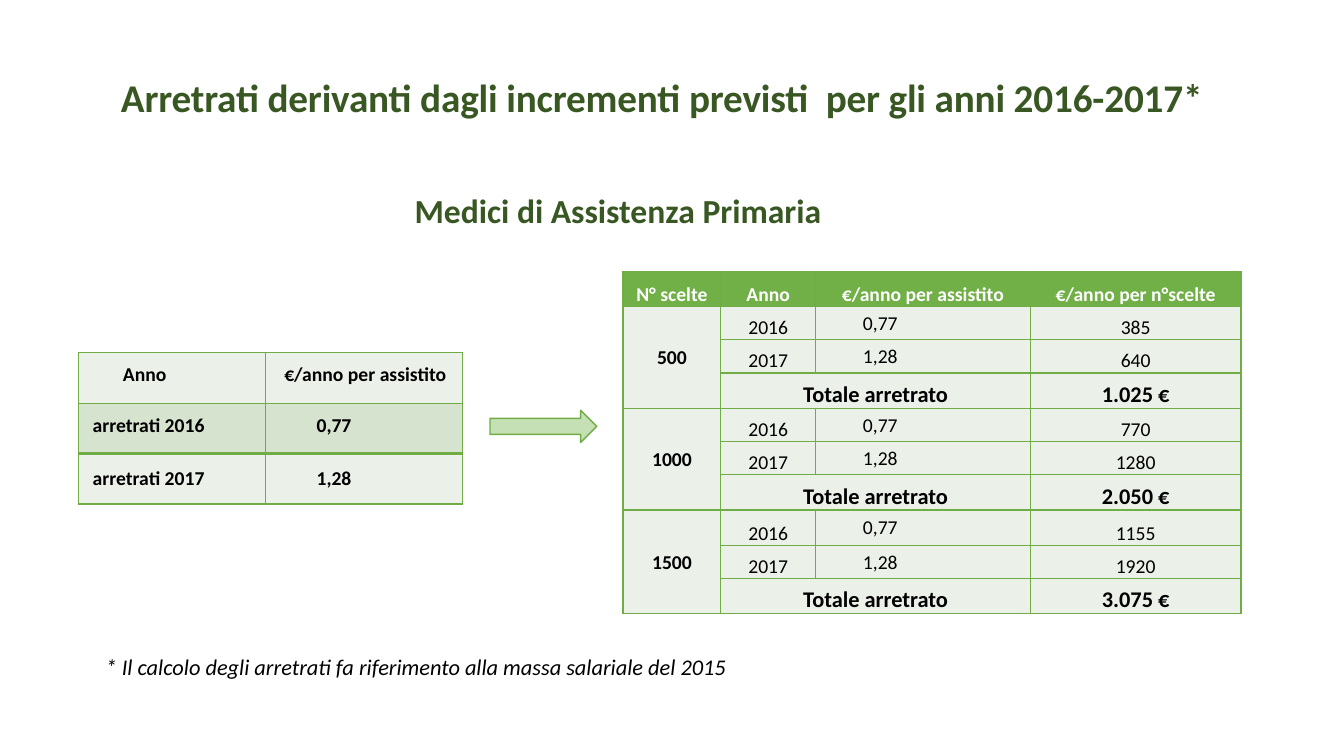
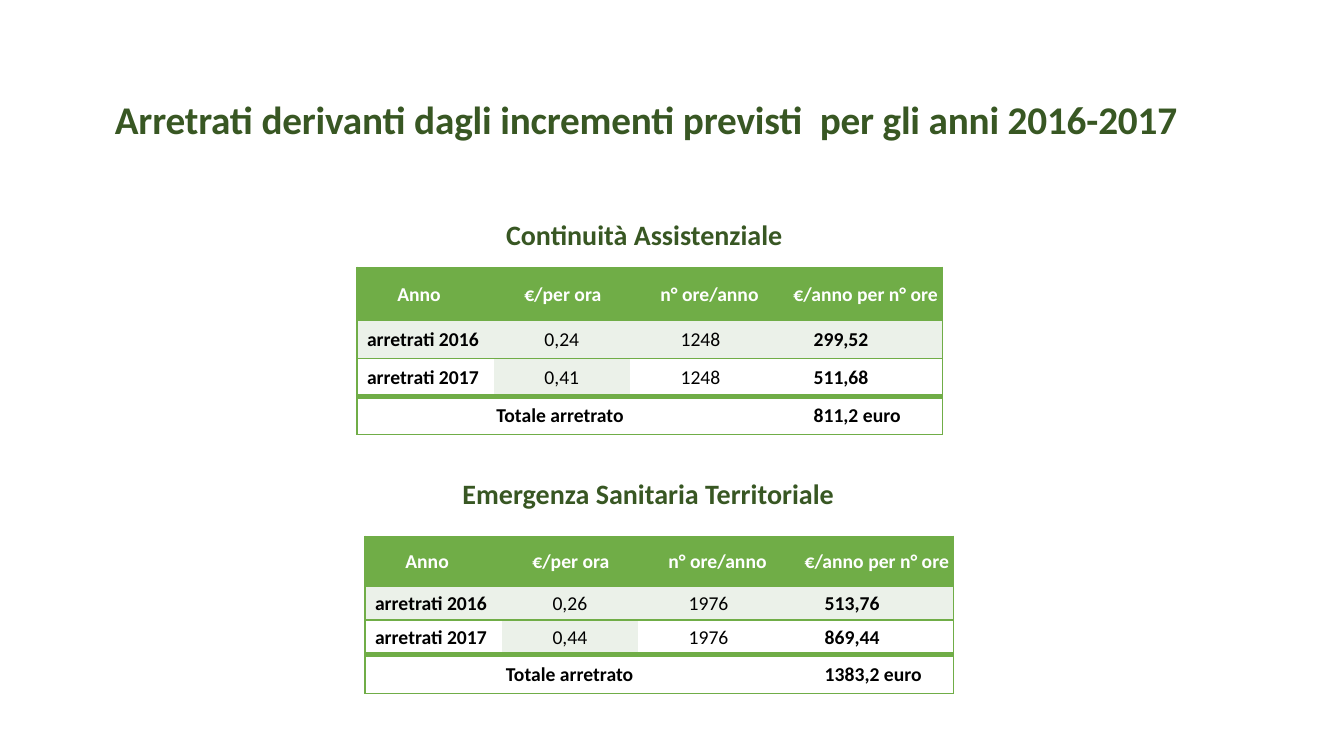
from lxml import etree
from pptx import Presentation
from pptx.dml.color import RGBColor
from pptx.enum.shapes import MSO_SHAPE
from pptx.enum.text import MSO_ANCHOR, MSO_AUTO_SIZE, PP_ALIGN
from pptx.oxml.ns import qn
from pptx.util import Inches, Pt

LEFT, CENTER = PP_ALIGN.LEFT, PP_ALIGN.CENTER
TOP, MIDDLE, BOTTOM = MSO_ANCHOR.TOP, MSO_ANCHOR.MIDDLE, MSO_ANCHOR.BOTTOM
ARROW = MSO_SHAPE.RIGHT_ARROW
NO_FIT = MSO_AUTO_SIZE.NONE

FONT = "Calibri"
INK = {
    "title": "385723", "line": "70AD47", "head": "71AF47", "pale": "EBF1E9",
    "band": "D5E3CF", "arrow": "C5E0B4", "white": "FFFFFF", "text": "000000",
}

TITLE = "Arretrati derivanti dagli incrementi previsti  per gli anni 2016-2017"
NOTE = "* Il calcolo degli arretrati fa riferimento alla massa salariale del 2015"
TOTAL = "Totale arretrato"

RATES = [
    ("Anno", "€/anno per assistito"),
    ("arretrati 2016", "0,77"),
    ("arretrati 2017", "1,28"),
]
PADS = [(0.44, 0.19), (0.14, 0.51), (0.14, 0.51)]

HEADS = ["N° scelte", "Anno", "€/anno per assistito", "€/anno per n°scelte"]
GROUPS = [
    ("500", ("385", "640"), "1.025 €"),
    ("1000", ("770", "1280"), "2.050 €"),
    ("1500", ("1155", "1920"), "3.075 €"),
]
YEARS = [("2016", "0,77"), ("2017", "1,28")]

HOURS = ["Anno", "€/per ora", "n° ore/anno", "€/anno per n° ore"]
CARE = {
    "at": (3.54, 2.65),
    "cols": (1.36, 1.35, 1.32, 1.78),
    "rows": (0.53, 0.38, 0.37, 0.38),
    "data": [
        ("arretrati 2016", "0,24", "1248", "299,52"),
        ("arretrati 2017", "0,41", "1248", "511,68"),
    ],
    "sum": "811,2 euro",
}
URGENT = {
    "at": (3.62, 5.32),
    "cols": (1.36, 1.35, 1.35, 1.78),
    "rows": (0.5, 0.33, 0.34, 0.39),
    "data": [
        ("arretrati 2016", "0,26", "1976", "513,76"),
        ("arretrati 2017", "0,44", "1976", "869,44"),
    ],
    "sum": "1383,2 euro",
}


def color(name):
    return RGBColor.from_string(INK[name])


def write(frame, text, size=14, bold=False, italic=False, ink="text",
          align=LEFT, space=None, before=0):
    para = frame.paragraphs[0]
    para.alignment = align
    para.space_before = Pt(before)
    if space:
        para.line_spacing = space
    run = para.add_run()
    run.text = text
    font = run.font
    font.name, font.size, font.bold, font.italic = FONT, Pt(size), bold, italic
    font.color.rgb = color(ink)


def place(shape, box):
    shape.left, shape.top, shape.width, shape.height = map(Inches, box)


def title(slide, text, box):
    shape = slide.shapes.title
    place(shape, box)
    frame = shape.text_frame
    frame.auto_size = NO_FIT
    frame.vertical_anchor = MIDDLE
    write(frame, text, size=28, bold=True, ink="title", space=0.9)
    for props in shape.element.iter(qn("a:rPr")):
        props.set("spc", "-10")


def label(slide, text, box, anchor=TOP, **look):
    frame = slide.shapes.add_textbox(*map(Inches, box)).text_frame
    frame.word_wrap = True
    frame.vertical_anchor = anchor
    write(frame, text, **look)


def grid(slide, at, cols, rows):
    size = (sum(cols), sum(rows))
    shape = slide.shapes.add_table(len(rows), len(cols), *map(Inches, at + size))
    table = shape.table
    table.first_row = table.horz_banding = False
    for col, width in zip(table.columns, cols):
        col.width = Inches(width)
    for row, height in zip(table.rows, rows):
        row.height = Inches(height)
    return table


def edge(cell, widths):
    props = cell._tc.get_or_add_tcPr()
    for side, width in zip("LRTB", widths):
        line = etree.SubElement(props, qn("a:ln" + side), w=str(Pt(width)))
        if width:
            fill = etree.SubElement(line, qn("a:solidFill"))
            etree.SubElement(fill, qn("a:srgbClr"), val=INK["line"])
        else:
            etree.SubElement(line, qn("a:noFill"))


def put(cell, text, fill="pale", pad=0.01, rim=0.01, anchor=MIDDLE, **look):
    cell.margin_left, cell.margin_right = Inches(pad), Inches(rim)
    cell.margin_top, cell.margin_bottom = Inches(rim), 0
    cell.vertical_anchor = anchor
    cell.fill.solid()
    cell.fill.fore_color.rgb = color(fill)
    write(cell.text_frame, text, **look)


def rates(slide):
    table = grid(slide, (0.78, 3.5), (1.85, 1.96), (0.5,) * 3)
    for r, (row, pads) in enumerate(zip(RATES, PADS)):
        for c, (text, pad) in enumerate(zip(row, pads)):
            cell = table.cell(r, c)
            edge(cell, (1, 1, 2 if r == 2 else 1, 2 if r == 1 else 1))
            put(cell, text, fill="band" if r == 1 else "pale", pad=pad, rim=0,
                bold=True, space=Pt(12.8) if r < 2 else None)


def choices(slide):
    heights = (0.35, 0.33, 0.33, 0.35, 0.33, 0.33, 0.35, 0.35, 0.33, 0.35)
    table = grid(slide, (6.18, 2.69), (0.97, 0.94, 2.13, 2.09), heights)
    for cell in table.iter_cells():
        edge(cell, (1, 1, 1, 1))
    low = {"anchor": BOTTOM, "align": CENTER}
    for c, text in enumerate(HEADS):
        put(table.cell(0, c), text, fill="head", ink="white", bold=True, **low)
    for g, (count, sums, total) in enumerate(GROUPS):
        top = 1 + 3 * g
        last = top + 2
        table.cell(top, 0).merge(table.cell(last, 0))
        put(table.cell(top, 0), count, bold=True, align=CENTER)
        for r, ((year, rate), value) in enumerate(zip(YEARS, sums), top):
            put(table.cell(r, 1), year, **low)
            put(table.cell(r, 2), rate, pad=0.47)
            put(table.cell(r, 3), value, **low)
        table.cell(last, 1).merge(table.cell(last, 2))
        for c, text in ((1, TOTAL), (3, total)):
            put(table.cell(last, c), text, size=16, bold=True, **low)


def hours(slide, plan):
    table = grid(slide, plan["at"], plan["cols"], plan["rows"])
    for r in range(4):
        for c in range(4):
            edge(table.cell(r, c), (int(c == 0), int(c == 3),
                                    4 if r == 3 else 1, 4 if r == 2 else 1))
    for c, text in enumerate(HOURS):
        put(table.cell(0, c), text, fill="line", ink="white", bold=True,
            pad=0.3 if c else 0.4)
    for r, row in enumerate(plan["data"], 1):
        for c, text in enumerate(row):
            put(table.cell(r, c), text, fill="pale" if r == 1 or c == 1 else "white",
                pad=0.5 if c else 0.1, bold=c in (0, 3))
    table.cell(3, 0).merge(table.cell(3, 2))
    put(table.cell(3, 0), TOTAL, fill="white", bold=True, align=CENTER)
    put(table.cell(3, 3), plan["sum"], fill="white", pad=0.5, bold=True)


def primary(deck):
    slide = deck.slides.add_slide(deck.slide_layouts[5])
    title(slide, TITLE + "*", (1.1, 0.68, 11.5, 0.62))
    label(slide, "Medici di Assistenza Primaria", (3.64, 1.88, 4.98, 0.47),
          size=24, bold=True, ink="title", align=CENTER, space=0.9, before=10)
    rates(slide)
    choices(slide)
    arrow = slide.shapes.add_shape(ARROW, *map(Inches, (4.86, 4.07, 1.06, 0.32)))
    arrow.shadow.inherit = False
    arrow.fill.solid()
    arrow.fill.fore_color.rgb = color("arrow")
    arrow.line.color.rgb = color("line")
    arrow.line.width = Pt(1)
    label(slide, NOTE, (0.95, 6.43, 11.93, 0.37), size=16, italic=True)


def services(deck):
    slide = deck.slides.add_slide(deck.slide_layouts[1])
    title(slide, TITLE, (1.04, 0.9, 11.5, 0.62))
    look = {"size": 20, "bold": True, "ink": "title", "align": CENTER, "space": 0.9}
    body = slide.placeholders[1]
    place(body, (4.78, 2.15, 3.22, 0.7))
    frame = body.text_frame
    frame.auto_size = NO_FIT
    write(frame, "Continuità Assistenziale", before=10, **look)
    for props in body.element.iter(qn("a:pPr")):
        props.set("marL", "0")
        props.set("indent", "0")
        etree.SubElement(props, qn("a:buNone"))
    label(slide, "Emergenza Sanitaria Territoriale", (4.38, 4.62, 4.1, 0.58),
          anchor=MIDDLE, **look)
    for plan in (CARE, URGENT):
        hours(slide, plan)


def main():
    deck = Presentation()
    deck.slide_width, deck.slide_height = Inches(13.33), Inches(7.5)
    primary(deck)
    services(deck)
    deck.save("out.pptx")


if __name__ == "__main__":
    main()
